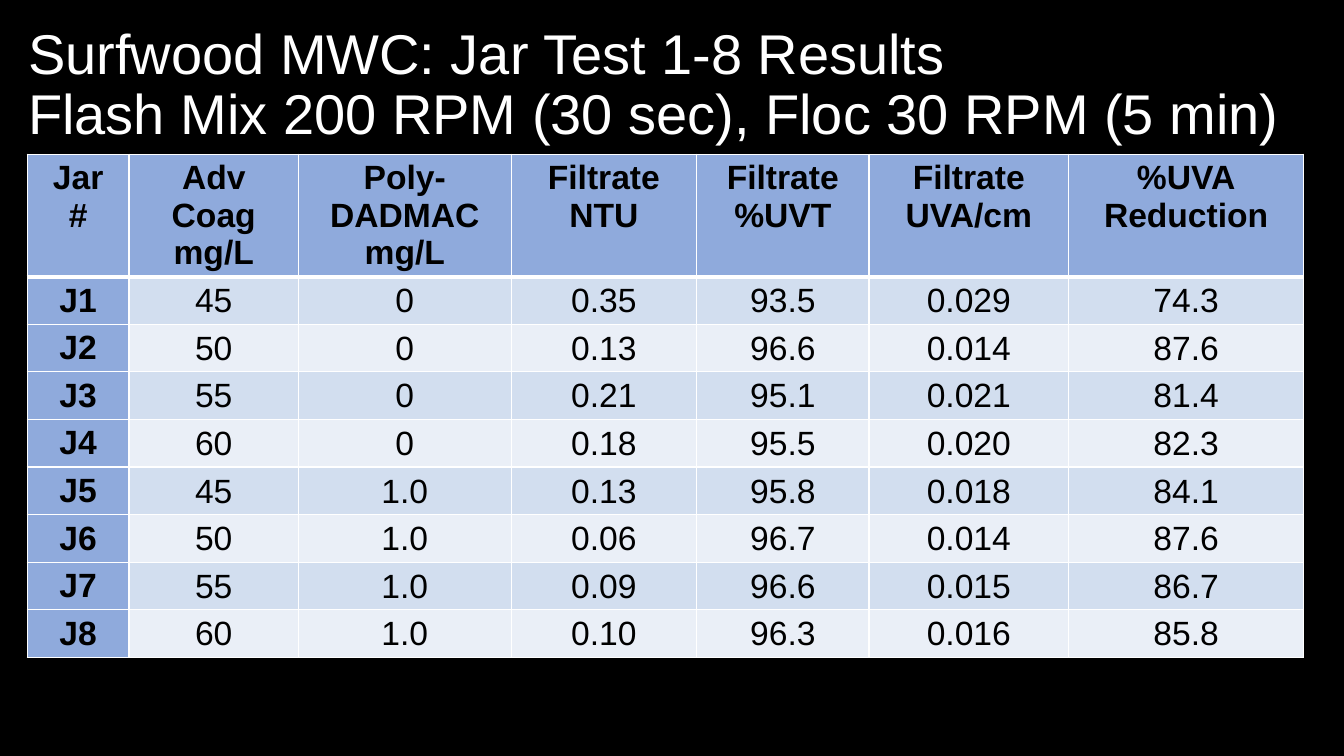
import copy

import pptx
import pptx.dml.color
import pptx.enum.text
import pptx.oxml
import pptx.oxml.ns
import pptx.util

ALIGN = pptx.enum.text.PP_ALIGN
ANCHOR = pptx.enum.text.MSO_ANCHOR
PIXEL = 9144

TITLE = "Surfwood MWC: Jar Test 1-8 Results\vFlash Mix 200 RPM (30 sec), Floc 30 RPM (5 min)"
HEADINGS = [
    "Jar\n#", "Adv\nCoag\nmg/L", "Poly-\nDADMAC\nmg/L", "Filtrate\nNTU",
    "Filtrate\n%UVT", "Filtrate\nUVA/cm", "%UVA\nReduction",
]
RESULTS = [
    ["J1", "45", "0", "0.35", "93.5", "0.029", "74.3"],
    ["J2", "50", "0", "0.13", "96.6", "0.014", "87.6"],
    ["J3", "55", "0", "0.21", "95.1", "0.021", "81.4"],
    ["J4", "60", "0", "0.18", "95.5", "0.020", "82.3"],
    ["J5", "45", "1.0", "0.13", "95.8", "0.018", "84.1"],
    ["J6", "50", "1.0", "0.06", "96.7", "0.014", "87.6"],
    ["J7", "55", "1.0", "0.09", "96.6", "0.015", "86.7"],
    ["J8", "60", "1.0", "0.10", "96.3", "0.016", "85.8"],
]
COLUMN_WIDTHS = [101, 168, 211, 184, 171, 198, 233]
HEADING_HEIGHT = 121
RESULT_HEIGHT = 47


def px(length):
    return pptx.util.Emu(length * PIXEL)


def color(value):
    return pptx.dml.color.RGBColor.from_string(value)


def write_text(frame, text, size, ink, font="Arial", bold=False, align=ALIGN.LEFT, spacing=None):
    for index, line in enumerate(text.split("\n")):
        para = frame.add_paragraph() if index else frame.paragraphs[0]
        para.text = line
        para.alignment = align
        para.line_spacing = spacing
        for span in para.runs:
            span.font.name = font
            span.font.size = pptx.util.Pt(size)
            span.font.bold = bold
            span.font.color.rgb = color(ink)
        for line_break in para._p.findall(pptx.oxml.ns.qn("a:br")):
            line_break.append(copy.deepcopy(para.runs[0]._r.rPr))


class ResultsSlide:
    background = "000000"
    title_ink = "FFFFFF"
    table_ink = "000000"
    border = "FFFFFF"
    heading_fill = "8FAADC"
    band_fills = ["D2DEEF", "EAEFF7"]
    title_size = 40
    table_size = 24

    def __init__(self, deck):
        layout = deck.slide_layouts.get_by_name("Title Only")
        self.page = deck.slides.add_slide(layout)
        fill = self.page.background.fill
        fill.solid()
        fill.fore_color.rgb = color(self.background)

    def title(self, text, left, top, width, height):
        box = self.page.shapes.title
        box.left, box.top, box.width, box.height = map(px, (left, top, width, height))
        frame = box.text_frame
        frame.word_wrap = True
        frame.auto_size = pptx.enum.text.MSO_AUTO_SIZE.NONE
        frame.vertical_anchor = ANCHOR.MIDDLE
        write_text(frame, text, self.title_size, self.title_ink, spacing=0.9)

    def borders(self, cell, top, bottom):
        properties = cell._tc.get_or_add_tcPr()
        for side, points in (("L", 1), ("R", 1), ("T", top), ("B", bottom)):
            properties.append(pptx.oxml.parse_xml(
                f'<a:ln{side} {pptx.oxml.ns.nsdecls("a")} w="{pptx.util.Pt(points)}">'
                f'<a:solidFill><a:srgbClr val="{self.border}"/></a:solidFill></a:ln{side}>'
            ))

    def cell(self, cell, text, row, column):
        heading = row == 0 or column == 0
        self.borders(cell, top=3 if row == 1 else 1, bottom=3 if row == 0 else 1)
        cell.fill.solid()
        cell.fill.fore_color.rgb = color(
            self.heading_fill if heading else self.band_fills[(row - 1) % 2]
        )
        if not heading:
            cell.vertical_anchor = ANCHOR.MIDDLE
            cell.margin_left = cell.margin_right = cell.margin_top = px(1)
            cell.margin_bottom = 0
        write_text(cell.text_frame, text, self.table_size, self.table_ink,
                   bold=heading, align=ALIGN.CENTER)

    def table(self, rows, left, top, widths, heights):
        table = self.page.shapes.add_table(
            len(rows), len(widths), px(left), px(top), px(sum(widths)), px(sum(heights))
        ).table
        for column, width in zip(table.columns, widths):
            column.width = px(width)
        for row, height in zip(table.rows, heights):
            row.height = px(height)
        for row, texts in enumerate(rows):
            for column, text in enumerate(texts):
                self.cell(table.cell(row, column), text, row, column)


def main():
    deck = pptx.Presentation()
    deck.slide_width = px(1333)
    deck.slide_height = px(750)
    slide = ResultsSlide(deck)
    slide.title(TITLE, 18, 13, 1298, 145)
    heights = [HEADING_HEIGHT] + [RESULT_HEIGHT] * len(RESULTS)
    slide.table([HEADINGS] + RESULTS, 27, 153, COLUMN_WIDTHS, heights)
    deck.save("out.pptx")


if __name__ == "__main__":
    main()
